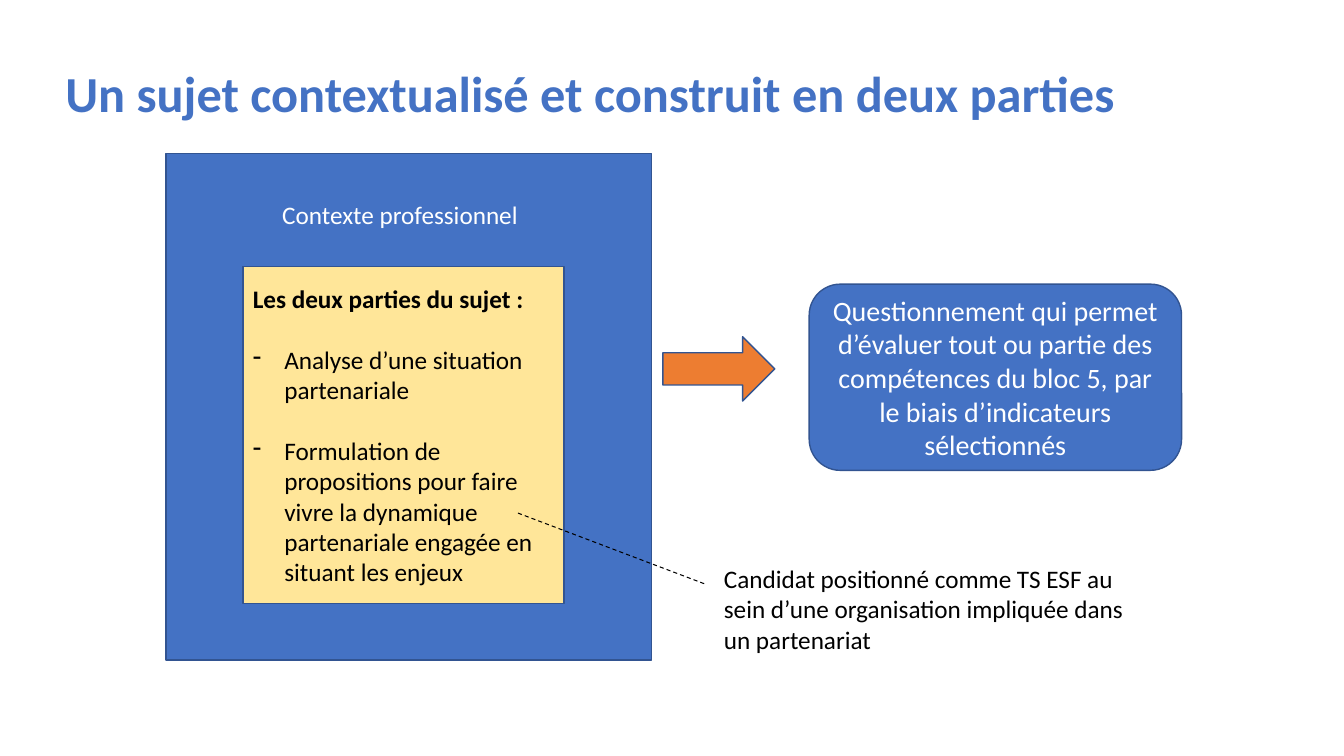
from dataclasses import dataclass

from lxml.etree import SubElement
from pptx import Presentation
from pptx.dml.color import RGBColor
from pptx.enum.dml import MSO_LINE
from pptx.enum.shapes import MSO_CONNECTOR, MSO_SHAPE
from pptx.enum.text import MSO_ANCHOR, PP_ALIGN
from pptx.oxml.ns import qn
from pptx.util import Pt


@dataclass(frozen=True)
class Theme:
    font: str = "Calibri"
    blue: RGBColor = RGBColor(0x44, 0x72, 0xC4)
    outline: RGBColor = RGBColor(0x32, 0x54, 0x91)
    yellow: RGBColor = RGBColor(0xFF, 0xE6, 0x99)
    orange: RGBColor = RGBColor(0xED, 0x7D, 0x31)
    white: RGBColor = RGBColor(0xFF, 0xFF, 0xFF)
    black: RGBColor = RGBColor(0x00, 0x00, 0x00)
    title_size: int = 36
    question_size: int = 20
    body_size: int = 18


theme = Theme()
deck = Presentation()
deck.slide_width, deck.slide_height = Pt(960), Pt(540)
page = deck.slides.add_slide(deck.slide_layouts[6])


def add_box(kind, left, top, width, height, fill):
    """Add an outlined preset shape, or a plain text box when kind is None."""
    place = Pt(left), Pt(top), Pt(width), Pt(height)
    if kind is None:
        box = page.shapes.add_textbox(*place)
    else:
        box = page.shapes.add_shape(kind, *place)
        box.shadow.inherit = False
        box.fill.solid()
        box.fill.fore_color.rgb = fill
        box.line.color.rgb = theme.outline
        box.line.width = Pt(1)
    box.text_frame.word_wrap = True
    return box


def write(para, text, size, color, bold=False, align=PP_ALIGN.LEFT):
    para.text = text
    para.alignment = align
    para.font.name = theme.font
    para.font.size = Pt(size)
    para.font.color.rgb = color
    para.font.bold = bold


# Professional context frame and title
add_box(MSO_SHAPE.RECTANGLE, 118.5, 109.5, 347, 362, theme.blue)

title = add_box(None, 39.6, 29.5, 828, 79, None)
title.text_frame.vertical_anchor = MSO_ANCHOR.MIDDLE
title_para = title.text_frame.paragraphs[0]
write(title_para, "Un sujet contextualisé et construit en deux parties",
      theme.title_size, theme.blue, bold=True)
title_para.line_spacing = 0.9

# Questions
question = add_box(MSO_SHAPE.ROUNDED_RECTANGLE, 578, 203, 266, 133, theme.blue)
question.text_frame.vertical_anchor = MSO_ANCHOR.MIDDLE
write(question.text_frame.paragraphs[0],
      "Questionnement qui permet d’évaluer tout ou partie des compétences "
      "du bloc 5, par le biais d’indicateurs sélectionnés",
      theme.question_size, theme.white, align=PP_ALIGN.CENTER)

# The two parts of the subject
parts = add_box(MSO_SHAPE.RECTANGLE, 173.5, 190.5, 229.5, 240.5, theme.yellow)
parts.text_frame.vertical_anchor = MSO_ANCHOR.MIDDLE
write(parts.text_frame.paragraphs[0], "Les deux parties du sujet :",
      theme.body_size, theme.black, bold=True)
for part in (
    "Analyse d’une situation partenariale",
    "Formulation de propositions pour faire vivre la dynamique "
    "partenariale engagée en situant les enjeux",
):
    para = parts.text_frame.add_paragraph()
    write(para, part, theme.body_size, theme.black)
    para.space_before = Pt(22)
    properties = para._p.get_or_add_pPr()
    properties.set("marL", str(Pt(22.5)))
    properties.set("indent", str(Pt(-22.5)))
    bullet = SubElement(properties, qn("a:buChar"), char="-")
    properties.find(qn("a:defRPr")).addprevious(bullet)

add_box(MSO_SHAPE.RIGHT_ARROW, 473.5, 240.5, 80, 46, theme.orange)

context = add_box(None, 194.5, 139, 183.5, 29, None)
write(context.text_frame.paragraphs[0], "Contexte professionnel",
      theme.body_size, theme.white)

# Candidate note and its leader line
leader = page.shapes.add_connector(
    MSO_CONNECTOR.STRAIGHT, Pt(370), Pt(366.5), Pt(504.5), Pt(417.5))
leader.line.color.rgb = theme.black
leader.line.width = Pt(0.75)
leader.line.dash_style = MSO_LINE.DASH
SubElement(leader._element.spPr, qn("a:effectLst"))

candidate = add_box(None, 510, 399, 304.5, 72.5, None)
write(candidate.text_frame.paragraphs[0],
      "Candidat positionné comme TS ESF au sein d’une organisation "
      "impliquée dans un partenariat",
      theme.body_size, theme.black)

deck.save("out.pptx")
